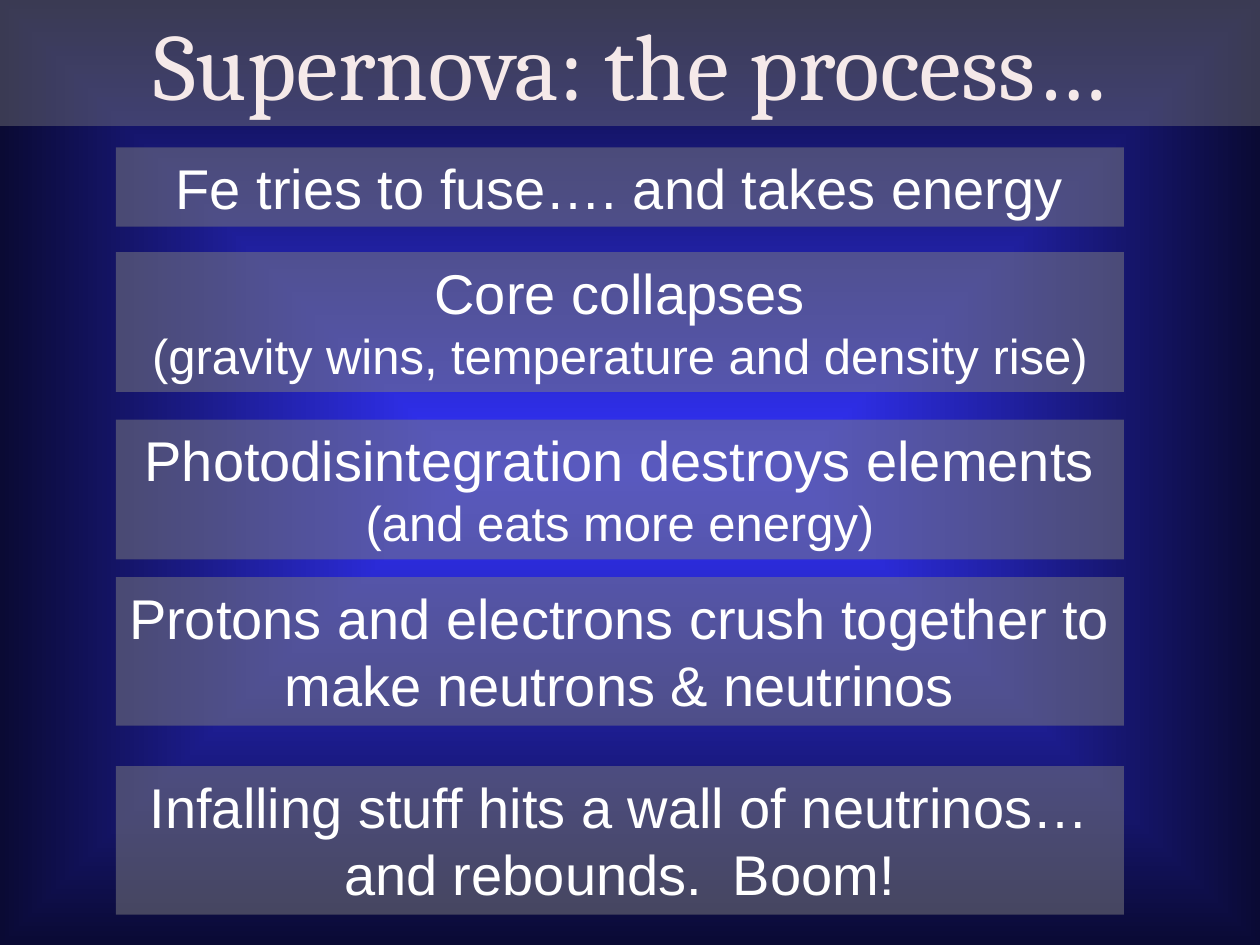
from lxml import etree
from pptx import Presentation
from pptx.dml.color import RGBColor
from pptx.enum.text import MSO_ANCHOR, MSO_AUTO_SIZE, PP_ALIGN
from pptx.oxml.ns import qn
from pptx.util import Inches, Pt

COLORS = {
    "center": "3333FF",
    "edge": "0A0A34",
    "panel": "808080",
    "title": "F5E9E9",
    "text": "FFFFFF",
}

# top, height, main line, optional smaller line
STEPS = [
    (1.17, 0.63, "Fe tries to fuse…. and takes energy", None),
    (2, 1.11, "Core collapses", "(gravity wins, temperature and density rise)"),
    (3.33, 1.11, "Photodisintegration destroys elements", "(and eats more energy)"),
    (4.58, 1.18, "Protons and electrons crush together to make neutrons & neutrinos", None),
    (6.08, 1.18, "Infalling stuff hits a wall of neutrinos… and rebounds.  Boom!", None),
]


def fill_panel(shape, opacity):
    """Give the shape a see-through grey fill, opacity in percent."""
    shape.fill.solid()
    shape.fill.fore_color.rgb = RGBColor.from_string(COLORS["panel"])
    color = shape._element.spPr.find(qn("a:solidFill"))[0]
    etree.SubElement(color, qn("a:alpha")).set("val", str(opacity * 1000))


def format_paragraph(paragraph, size, font_name, color):
    paragraph.alignment = PP_ALIGN.CENTER
    for run in paragraph.runs:
        run.font.size = Pt(size)
        run.font.name = font_name
        run.font.color.rgb = RGBColor.from_string(COLORS[color])


presentation = Presentation()
presentation.slide_width = Inches(10)
presentation.slide_height = Inches(7.5)
slide = presentation.slides.add_slide(presentation.slide_layouts[5])

# Background glow from the center outwards
background = slide.background.fill
background.gradient()
for stop, name in zip(background.gradient_stops, ("center", "edge")):
    stop.color.rgb = RGBColor.from_string(COLORS[name])
gradient = next(slide._element.iter(qn("a:gradFill")))
gradient.remove(gradient.find(qn("a:lin")))
glow = etree.SubElement(gradient, qn("a:path"))
glow.set("path", "shape")
focus = etree.SubElement(glow, qn("a:fillToRect"))
for side in "ltrb":
    focus.set(side, "50000")

# Title band
title = slide.shapes.title
title.left, title.top = Inches(0), Inches(0)
title.width, title.height = Inches(10), Inches(1)
fill_panel(title, 41)
title.text_frame.text = "Supernova: the process…"
title.text_frame.auto_size = MSO_AUTO_SIZE.NONE
title.text_frame.vertical_anchor = MSO_ANCHOR.TOP
format_paragraph(title.text_frame.paragraphs[0], 54, "Cambria", "title")

# Steps of the process
for top, height, main_line, detail in STEPS:
    panel = slide.shapes.add_textbox(Inches(0.92), Inches(top), Inches(8), Inches(height))
    fill_panel(panel, 50)
    text_frame = panel.text_frame
    text_frame.word_wrap = True
    text_frame.text = main_line
    format_paragraph(text_frame.paragraphs[0], 32, "Arial", "text")
    if detail:
        paragraph = text_frame.add_paragraph()
        paragraph.text = detail
        format_paragraph(paragraph, 28, "Arial", "text")

presentation.save("out.pptx")
